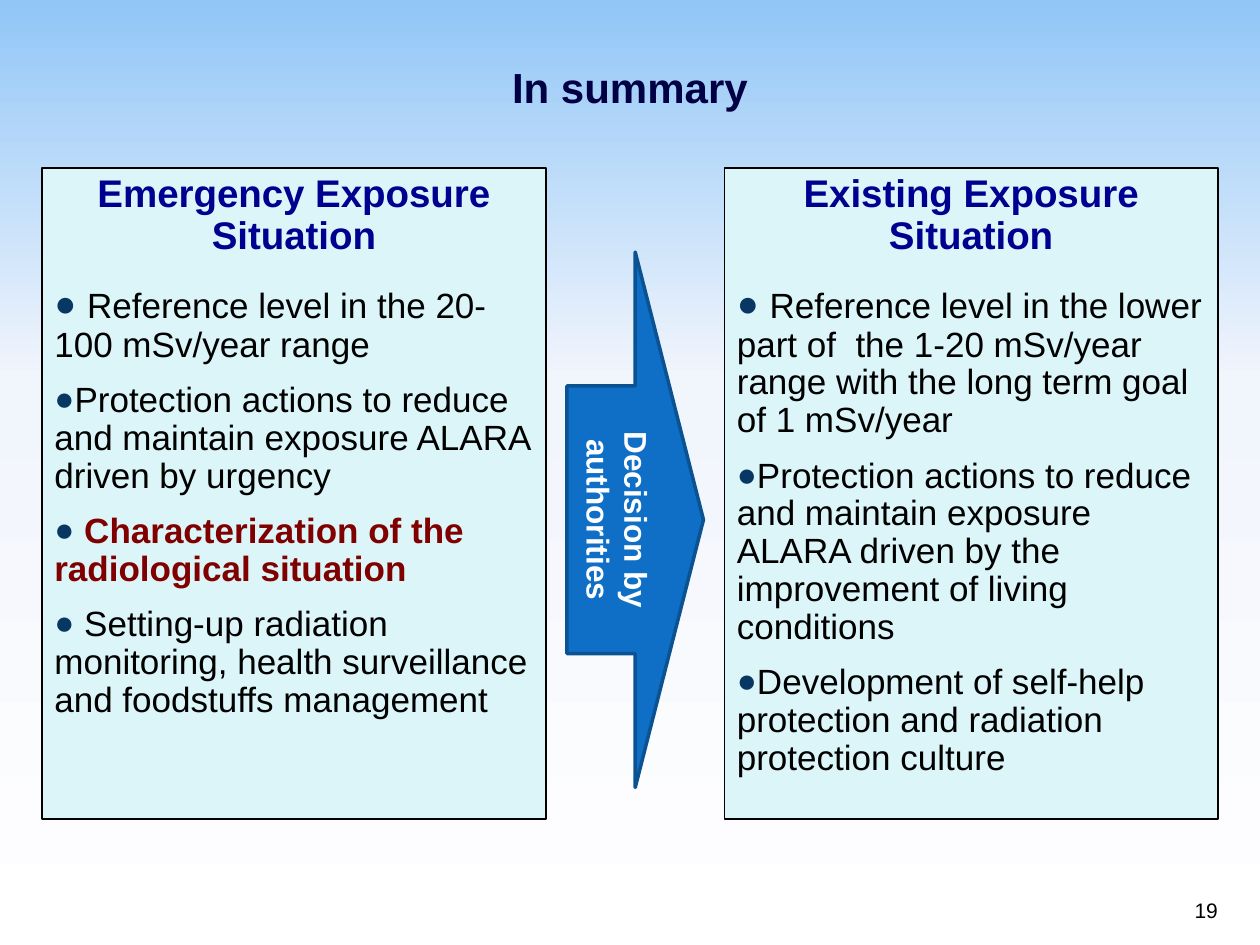
from copy import deepcopy

from lxml import etree
from pptx import Presentation
from pptx import util as u
from pptx.dml import color
from pptx.enum import shapes, text
from pptx.oxml import ns

BLACK = "000000"
HEADING = {"size": 22, "bold": True, "color": "000090"}
BODY = {"size": 20, "color": BLACK}
LEAD = {"size": 22, "color": BLACK}
ACCENT = {"size": 20, "bold": True, "color": "800000"}
BULLET = (
    ("buClr", {}),
    ("buSzPct", {"val": "95000"}),
    ("buFont", {"typeface": "Arial"}),
    ("buChar", {"char": "●"}),
)


def rgb(value):
    return color.RGBColor.from_string(value)


class SlideBuilder:
    font = "Arial"
    bullet_color = "083763"

    def __init__(self, presentation):
        self.slide = presentation.slides.add_slide(presentation.slide_layouts[6])

    def background(self, stops, angle):
        fill = self.slide.background.fill
        fill.gradient()
        fill.gradient_angle = angle
        stop_list = fill.gradient_stops[0]._gs.getparent()
        while len(stop_list) < len(stops):
            stop_list.append(deepcopy(stop_list[-1]))
        for stop, (position, value) in zip(fill.gradient_stops, stops):
            stop.position = position
            stop.color.rgb = rgb(value)

    def frame(self, shape, anchor, **margins):
        frame = shape.text_frame
        values = {"word_wrap": True, "vertical_anchor": anchor, **margins}
        for name, value in values.items():
            setattr(frame, name, value)
        return frame

    def bullet(self, paragraph):
        properties = paragraph._p.get_or_add_pPr()
        for tag, attributes in BULLET:
            element = etree.SubElement(properties, ns.qn(f"a:{tag}"), attributes)
            if tag == "buClr":
                etree.SubElement(element, ns.qn("a:srgbClr"), {"val": self.bullet_color})

    def add_paragraphs(self, frame, paragraphs, alignment):
        for index, runs in enumerate(paragraphs):
            paragraph = frame.paragraphs[0] if index == 0 else frame.add_paragraph()
            paragraph.alignment = alignment
            for content, style in runs:
                run = paragraph.add_run()
                run.text = content
                values = {"name": self.font, "bold": False, **style}
                run.font.color.rgb = rgb(values.pop("color"))
                values["size"] = u.Pt(values["size"])
                for name, value in values.items():
                    setattr(run.font, name, value)

    def label(self, box, content, style, alignment, anchor, **margins):
        shape = self.slide.shapes.add_textbox(*map(u.Pt, box))
        frame = self.frame(shape, anchor, **margins)
        self.add_paragraphs(frame, [[(content, style)]], alignment)

    def block(self, kind, box, fill, line, width):
        shape = self.slide.shapes.add_shape(kind, *map(u.Pt, box))
        shape.shadow.inherit = False
        shape.fill.solid()
        shape.fill.fore_color.rgb = rgb(fill)
        shape.line.color.rgb = rgb(line)
        shape.line.width = u.Pt(width)
        return shape

    def panel(self, box, heading, items):
        shape = self.block(shapes.MSO_SHAPE.RECTANGLE, box, "DBF5F9", BLACK, 0.75)
        frame = self.frame(shape, text.MSO_ANCHOR.TOP)
        self.add_paragraphs(frame, [[(heading, HEADING)], *items], text.PP_ALIGN.LEFT)
        title, *points = frame.paragraphs
        title.alignment = text.PP_ALIGN.CENTER
        title.line_spacing = 0.9
        title.space_after = u.Pt(12)
        for paragraph in points:
            spacing = {"line_spacing": 0.9, "space_before": u.Pt(4), "space_after": u.Pt(6)}
            for name, value in spacing.items():
                setattr(paragraph, name, value)
            self.bullet(paragraph)

    def arrow(self, box, lines):
        shape = self.block(shapes.MSO_SHAPE.RIGHT_ARROW, box, "0F6FC6", "0B5292", 2)
        frame = self.frame(shape, text.MSO_ANCHOR.MIDDLE)
        frame._txBody.bodyPr.set("vert", "vert")
        style = {"size": 18, "bold": True, "color": "FFFFFF"}
        self.add_paragraphs(frame, [[(line, style)] for line in lines], text.PP_ALIGN.CENTER)


def main():
    presentation = Presentation()
    presentation.slide_width, presentation.slide_height = u.Pt(720), u.Pt(540)
    builder = SlideBuilder(presentation)
    builder.background([(0, "91C6F7"), (0.4, "F1F5FC"), (1, "FFFFFF")], 270)
    builder.label(
        (0, 18, 720, 60), "In summary", {"size": 24, "bold": True, "color": "000045"},
        text.PP_ALIGN.CENTER, text.MSO_ANCHOR.MIDDLE,
        margin_left=0, margin_right=0, margin_bottom=0,
    )
    builder.panel((24, 96, 288, 372), "Emergency Exposure Situation", [
        [(" ", LEAD), ("Reference level in the 20-100 mSv/year range", BODY)],
        [("Protection actions to reduce and maintain exposure ALARA driven by urgency", BODY)],
        [(" ", BODY), ("Characterization of the radiological situation", ACCENT)],
        [(" Setting-up radiation monitoring, health surveillance and foodstuffs management", BODY)],
    ])
    builder.panel((414, 96, 282, 372), "Existing Exposure Situation", [
        [(" ", LEAD), ("Reference level in the lower part of  the 1-20 mSv/year range "
                       "with the long term goal of 1 mSv/year", BODY)],
        [("Protection actions to reduce and maintain exposure ALARA driven by "
          "the improvement of living conditions", BODY)],
        [("Development of self-help protection and radiation protection culture", BODY)],
    ])
    builder.arrow((324, 144, 78, 306), ["Decision by", "authorities"])
    builder.label(
        (553, 495, 150, 36), "19", {"size": 12, "color": BLACK},
        text.PP_ALIGN.RIGHT, text.MSO_ANCHOR.BOTTOM,
    )
    presentation.save("out.pptx")


if __name__ == "__main__":
    main()
